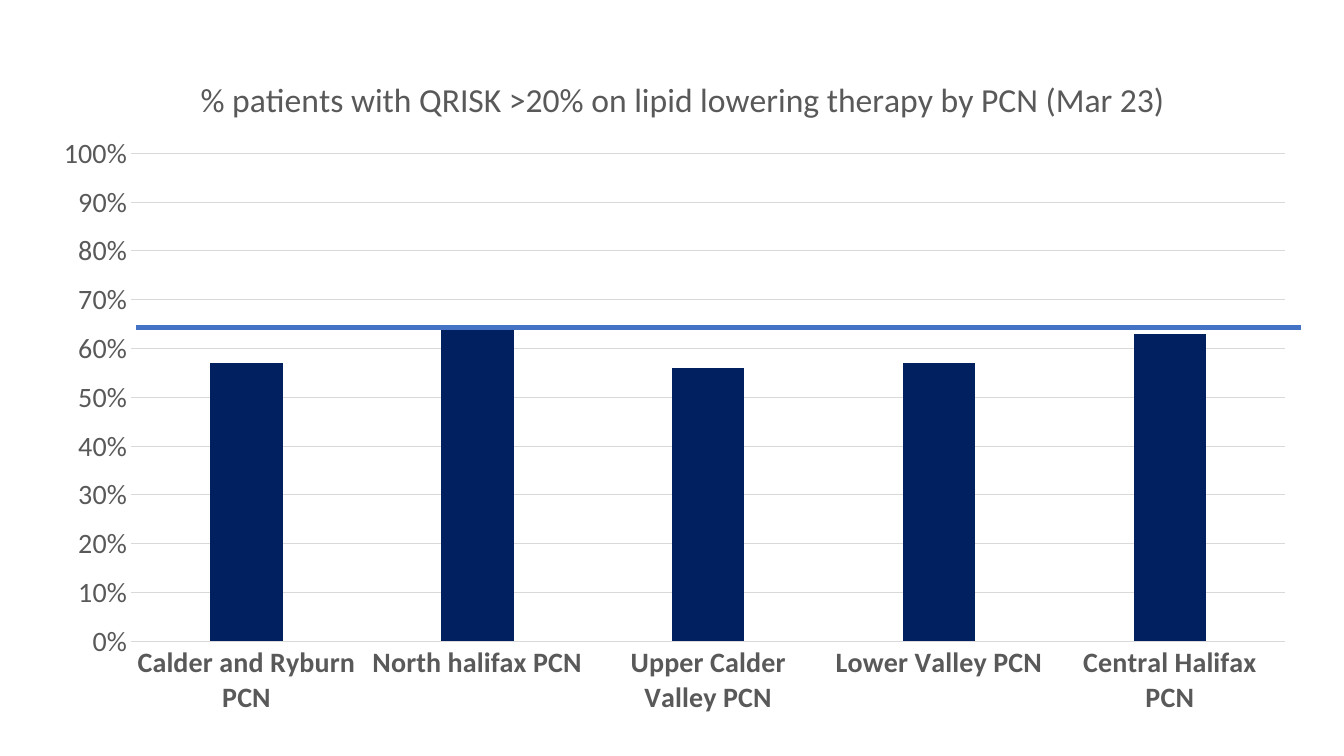
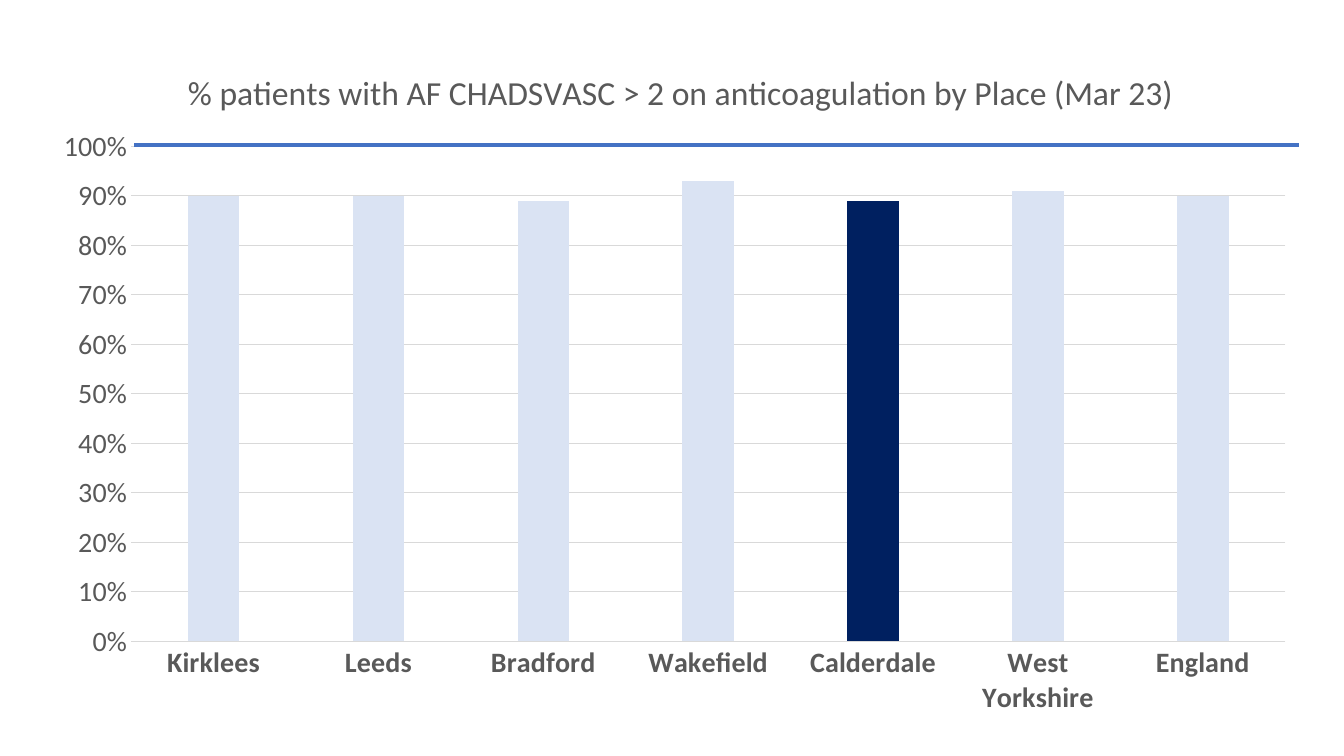
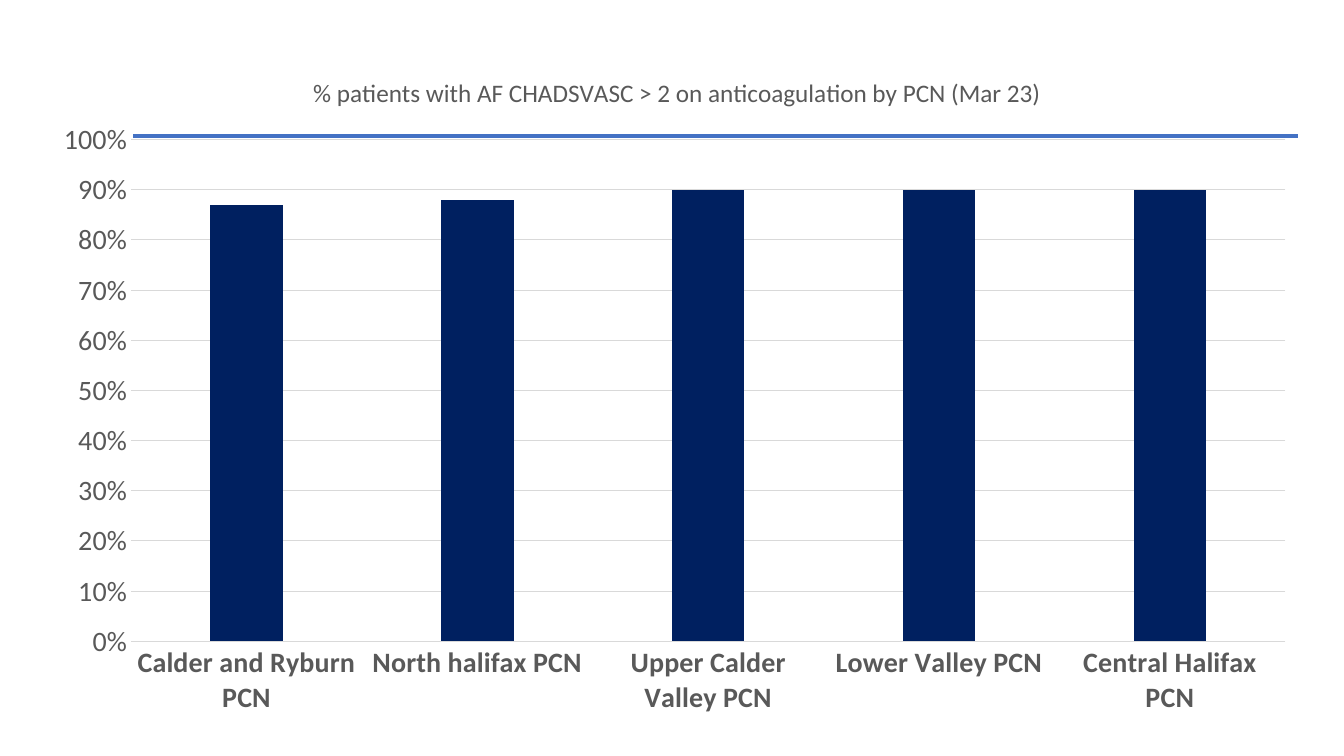
from dataclasses import dataclass

from lxml import etree
from pptx import Presentation
from pptx.chart.data import CategoryChartData
from pptx.dml.color import RGBColor
from pptx.enum.chart import XL_CHART_TYPE as ChartType, XL_TICK_MARK as Tick
from pptx.enum.shapes import MSO_CONNECTOR as Connector
from pptx.oxml.ns import qn
from pptx.util import Inches, Pt

NAVY = RGBColor(0x00, 0x20, 0x60)
PALE = RGBColor(0xDA, 0xE3, 0xF3)
BLUE = RGBColor(0x44, 0x72, 0xC4)
GREY = RGBColor(0x59, 0x59, 0x59)
GRID = RGBColor(0xD9, 0xD9, 0xD9)
FONT = "Calibri"

# Plot area as fractions of the chart frame
PLOT_LEFT, PLOT_WIDTH, PLOT_BOTTOM = 0.07, 0.91, 0.87

PCNS = ("Calder and Ryburn PCN", "North halifax PCN", "Upper Calder Valley PCN",
        "Lower Valley PCN", "Central Halifax PCN")
PLACES = ("Kirklees", "Leeds", "Bradford", "Wakefield", "Calderdale",
          "West Yorkshire", "England")


@dataclass(frozen=True)
class ChartSlide:
    title: str
    title_size: int
    title_at: tuple[float, float]  # fractions of the chart frame
    plot_top: float
    categories: tuple[str, ...]
    values: tuple[float, ...]
    target_from: tuple[float, float]  # inches
    color: RGBColor = NAVY
    highlight: str = ""


SLIDES = (
    ChartSlide("% patients with QRISK >20% on lipid lowering therapy by PCN (Mar 23)",
               24, (0.12, 0.04), 0.16, PCNS, (0.57, 0.64, 0.56, 0.57, 0.63),
               (1.35, 3.25)),
    ChartSlide("% patients with AF CHADSVASC > 2 on anticoagulation by Place (Mar 23)",
               24, (0.11, 0.03), 0.15, PLACES,
               (0.9, 0.9, 0.89, 0.93, 0.89, 0.91, 0.9),
               (1.33, 1.44), PALE, "Calderdale"),
    ChartSlide("% patients with AF CHADSVASC > 2 on anticoagulation by PCN (Mar 23)",
               18, (0.21, 0.04), 0.14, PCNS, (0.87, 0.88, 0.9, 0.9, 0.9),
               (1.32, 1.35)),
)


def style_font(font, size: int, color: RGBColor = GREY, bold: bool = False) -> None:
    font.name, font.size, font.bold = FONT, Pt(size), bold
    font.color.rgb = color


def write_text(tf, text: str, **fmt) -> None:
    p = tf.paragraphs[0]
    r = p.add_run()
    r.text = text
    style_font(r.font, **fmt)


def style_line(line, color: RGBColor, width: float) -> None:
    line.color.rgb = color
    line.width = Pt(width)


def set_layout(parent, index: int, **settings) -> None:
    """Place a chart part by hand, in fractions of the chart frame."""
    layout = parent.find(qn("c:layout"))
    if layout is None:
        layout = etree.Element(qn("c:layout"))
        parent.insert(index, layout)
    manual = etree.SubElement(layout, qn("c:manualLayout"))
    for name, value in settings.items():
        etree.SubElement(manual, qn(f"c:{name}")).set("val", str(value))


def style_axes(chart) -> None:
    for axis, bold in ((chart.category_axis, True), (chart.value_axis, False)):
        axis.major_tick_mark = axis.minor_tick_mark = Tick.NONE
        style_font(axis.tick_labels.font, 20, bold=bold)
    style_line(chart.category_axis.format.line, GRID, 0.75)

    axis = chart.value_axis
    axis.minimum_scale, axis.maximum_scale, axis.major_unit = 0, 1, 0.1
    axis.tick_labels.number_format = "0%"
    axis.tick_labels.number_format_is_linked = False
    axis.format.line.fill.background()
    style_line(axis.major_gridlines.format.line, GRID, 0.75)


def add_column_chart(slide, item: ChartSlide) -> None:
    data = CategoryChartData(number_format="0%")
    data.categories = item.categories
    data.add_series("Series 1", item.values)
    chart = slide.shapes.add_chart(
        ChartType.COLUMN_CLUSTERED, Inches(0.42), Inches(0.43),
        Inches(12.58), Inches(6.82), data).chart
    chart.has_legend = False
    style_font(chart.font, 10)
    style_axes(chart)

    # Title and plot position
    title = chart.chart_title
    write_text(title.text_frame, item.title, size=item.title_size)
    title.include_in_layout = False
    x, y = item.title_at
    set_layout(title._element, 1, xMode="edge", yMode="edge", x=x, y=y)
    set_layout(chart._chartSpace.chart.plotArea, 0, layoutTarget="inner",
               xMode="edge", yMode="edge", x=PLOT_LEFT, y=item.plot_top,
               w=PLOT_WIDTH, h=round(PLOT_BOTTOM - item.plot_top, 2))

    # Columns
    plot = chart.plots[0]
    plot.gap_width, plot.overlap, plot.vary_by_categories = 219, -27, False
    series = plot.series[0]
    series.format.fill.solid()
    series.format.fill.fore_color.rgb = item.color
    if item.highlight:
        fill = series.points[item.categories.index(item.highlight)].format.fill
        fill.solid()
        fill.fore_color.rgb = NAVY


def add_target_line(slide, x: float, y: float) -> None:
    line = slide.shapes.add_connector(
        Connector.STRAIGHT, Inches(x), Inches(y), Inches(x + 11.55), Inches(y))
    style_line(line.line, BLUE, 3)
    etree.SubElement(line._element.spPr, qn("a:effectLst"))


def main() -> None:
    prs = Presentation()
    prs.slide_width, prs.slide_height = Inches(13.33), Inches(7.5)
    for item in SLIDES:
        slide = prs.slides.add_slide(prs.slide_layouts[6])
        add_column_chart(slide, item)
        add_target_line(slide, *item.target_from)
    prs.save("out.pptx")


if __name__ == "__main__":
    main()
